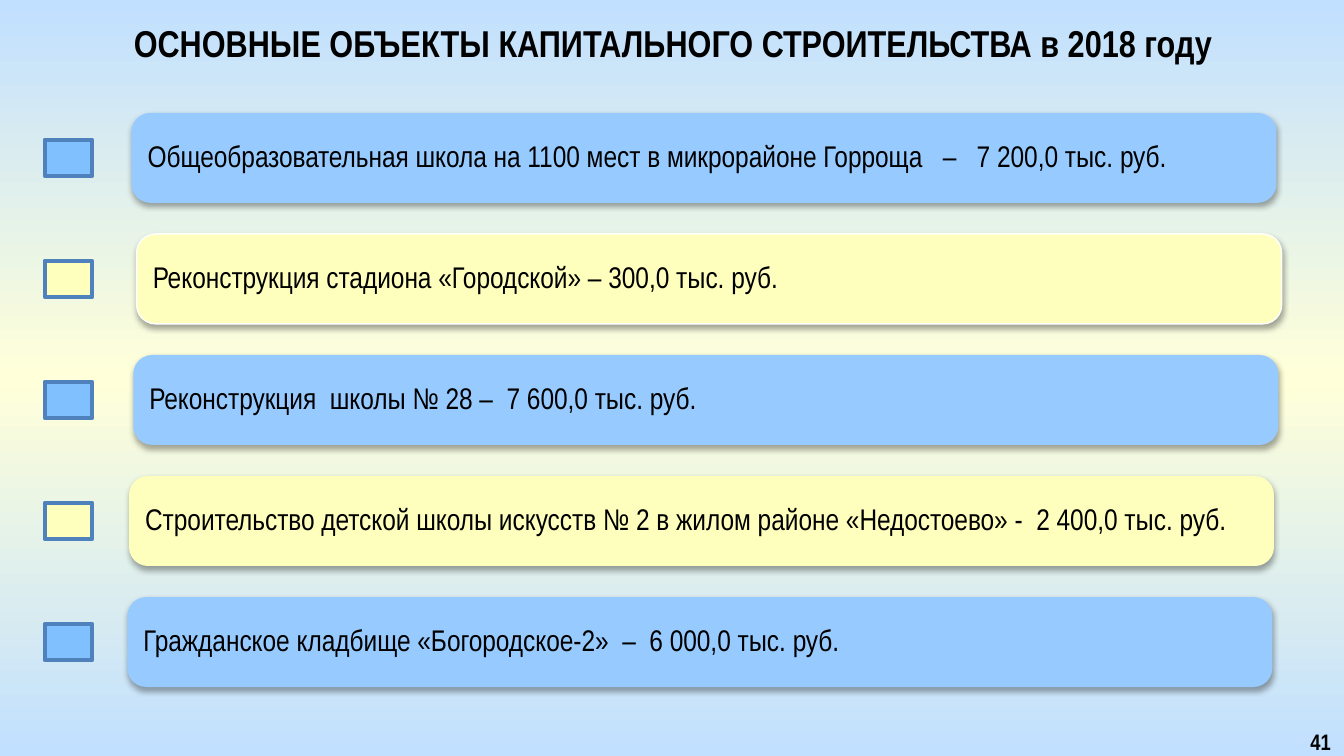
from copy import deepcopy

from lxml.etree import SubElement
from pptx import Presentation
from pptx.dml.color import RGBColor
from pptx.enum.shapes import MSO_SHAPE
from pptx.enum.text import MSO_ANCHOR, MSO_AUTO_SIZE, PP_ALIGN
from pptx.oxml.ns import qn
from pptx.util import Pt

TITLE = "ОСНОВНЫЕ ОБЪЕКТЫ КАПИТАЛЬНОГО СТРОИТЕЛЬСТВА в 2018 году"
PAGE = "41"
# (text, left edge of the bar)
PROJECTS = [
    ("Общеобразовательная школа на 1100 мест в микрорайоне Горроща   –   7 200,0 тыс. руб.", 70.4),
    ("Реконструкция стадиона «Городской» – 300,0 тыс. руб.", 73.2),
    ("Реконструкция  школы № 28 –  7 600,0 тыс. руб.", 71.4),
    ("Строительство детской школы искусств № 2 в жилом районе «Недостоево» -  2 400,0 тыс. руб.", 69.1),
    ("Гражданское кладбище «Богородское-2»  –  6 000,0 тыс. руб.", 68.2),
]
COLORS = {
    "sky": "C1E0FF", "cream": "FFFFD9", "bar_blue": "97CBFF", "marker_blue": "81C0FF",
    "yellow": "FFFFBD", "outline": "4F81BD", "white": "FFFFFF", "black": "000000",
}
FONT = "Arial Narrow"
BAR_TOP, BAR_STEP, BAR_W, BAR_H = 60.5, 64.85, 613.4, 48.2
MARKER_LEFT, MARKER_W, MARKER_H = 24, 25.4, 19.4


def rgb(name):
    return RGBColor.from_string(COLORS[name])


def write(tf, text, size, align, anchor, bold=False):
    tf.text = text
    tf.word_wrap = True
    tf.auto_size = MSO_AUTO_SIZE.NONE
    tf.vertical_anchor = anchor
    p = tf.paragraphs[0]
    p.alignment = align
    font = p.runs[0].font
    font.name, font.size, font.bold = FONT, Pt(size), bold
    font.color.rgb = rgb("black")


def add_box(s, kind, box, fill, line=None, width=0):
    sp = s.shapes.add_shape(kind, *map(Pt, box))
    sp.shadow.inherit = False
    sp.fill.solid()
    sp.fill.fore_color.rgb = rgb(fill)
    if line:
        sp.line.color.rgb = rgb(line)
        sp.line.width = Pt(width)
    else:
        sp.line.fill.background()
    return sp


def add_drop_shadow(sp):
    effects = sp._element.spPr.find(qn("a:effectLst"))
    shadow = SubElement(effects, qn("a:outerShdw"), blurRad=str(Pt(3.1)), dist=str(Pt(1.8)),
                        dir="5400000", rotWithShape="0")
    color = SubElement(shadow, qn("a:srgbClr"), val=COLORS["black"])
    SubElement(color, qn("a:alpha"), val="35000")


def set_background(s):
    """Vertical gradient: blue at both edges, cream in the middle."""
    fill = s.background.fill
    fill.gradient()
    fill.gradient_angle = 270
    stops = s.background._cSld.find(".//" + qn("a:gsLst"))
    stops.append(deepcopy(stops[-1]))
    for stop, position, color in zip(fill.gradient_stops, (0, 0.5, 1), ("sky", "cream", "sky")):
        stop.position = position
        stop.color.rgb = rgb(color)


prs = Presentation()
prs.slide_width, prs.slide_height = Pt(720), Pt(405)
s = prs.slides.add_slide(prs.slide_layouts[5])
set_background(s)

title = s.shapes.title
title.left, title.top, title.width, title.height = map(Pt, (36.7, 7.2, 648, 25.2))
write(title.text_frame, TITLE, 20, PP_ALIGN.CENTER, MSO_ANCHOR.TOP, bold=True)

for i, (text, left) in enumerate(PROJECTS):
    top = BAR_TOP + i * BAR_STEP
    bar_fill, marker_fill = ("yellow", "yellow") if i % 2 else ("bar_blue", "marker_blue")
    bar = add_box(s, MSO_SHAPE.ROUNDED_RECTANGLE, (left, top, BAR_W, BAR_H), bar_fill,
                  "white" if i == 1 else None, 0.75)
    bar.adjustments[0] = 0.21
    add_drop_shadow(bar)
    tf = bar.text_frame
    # The preset adds its own inset at the rounded corners.
    tf.margin_left = tf.margin_right = Pt(5.7)
    write(tf, text, 16, PP_ALIGN.LEFT, MSO_ANCHOR.MIDDLE)
    tf.paragraphs[0].line_spacing = 0.9

    marker_top = top + (BAR_H - MARKER_H) / 2
    add_box(s, MSO_SHAPE.RECTANGLE, (MARKER_LEFT, marker_top, MARKER_W, MARKER_H),
            marker_fill, "outline", 2.25)

page = s.shapes.add_textbox(*map(Pt, (686.2, 389.5, 33.8, 15.8)))
write(page.text_frame, PAGE, 12, PP_ALIGN.RIGHT, MSO_ANCHOR.MIDDLE, bold=True)

prs.save("out.pptx")
